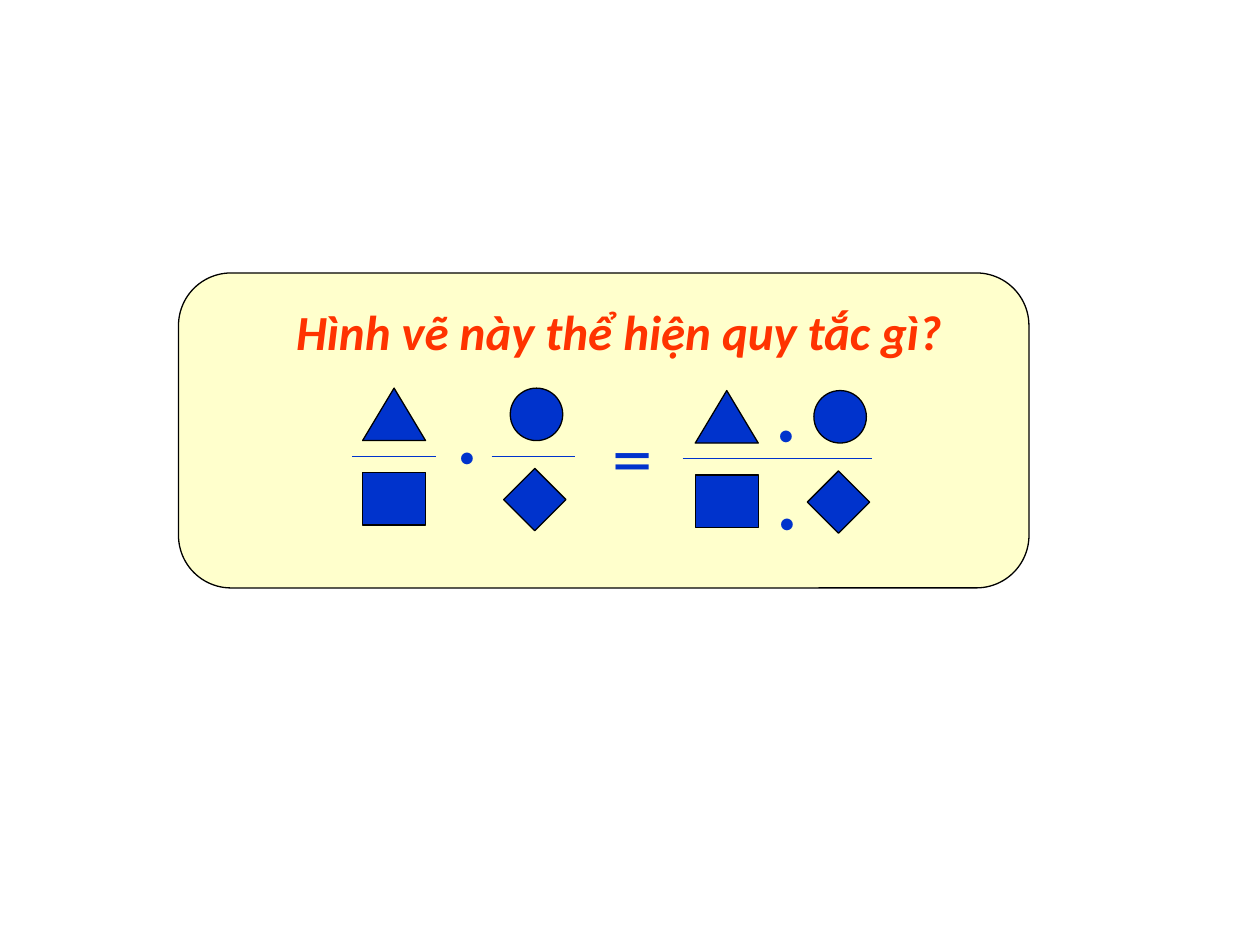
import pptx
import pptx.util
import pptx.dml.color
import pptx.enum.shapes
import pptx.enum.text
import pptx.oxml.ns
import lxml.etree
from dataclasses import dataclass

Pt = pptx.util.Pt
RGB = pptx.dml.color.RGBColor.from_string
KIND = pptx.enum.shapes.MSO_SHAPE


@dataclass(frozen=True)
class Theme:
    panel: str = "FFFFCC"
    outline: str = "000000"
    question: str = "FF3300"
    symbol: str = "0033CC"
    question_font: str = "Calibri"
    symbol_font: str = "TeX Gyre Schola"
    question_size: int = 28
    dot_size: int = 54
    equals_size: int = 36
    line_width: float = 0.75


theme = Theme()
deck = pptx.Presentation()
deck.slide_width, deck.slide_height = Pt(720), Pt(540)
page = deck.slides.add_slide(deck.slide_layouts[5])


def add_figure(kind, left, top, width, height, fill):
    figure = page.shapes.add_shape(kind, Pt(left), Pt(top), Pt(width), Pt(height))
    figure.shadow.inherit = False
    figure.fill.solid()
    figure.fill.fore_color.rgb = RGB(fill)
    figure.line.color.rgb = RGB(theme.outline)
    figure.line.width = Pt(theme.line_width)
    return figure


def write(box, text, font, size, color):
    """Put one unwrapped, left-aligned line of text in the box."""
    frame = box.text_frame
    frame.text = text
    frame.word_wrap = False
    frame.auto_size = pptx.enum.text.MSO_AUTO_SIZE.NONE
    frame.vertical_anchor = pptx.enum.text.MSO_ANCHOR.TOP
    frame.paragraphs[0].alignment = pptx.enum.text.PP_ALIGN.LEFT
    span = frame.paragraphs[0].runs[0]
    span.font.name = font
    span.font.size = Pt(size)
    span.font.color.rgb = RGB(color)
    return span


# Panel with the question
panel = add_figure(KIND.ROUNDED_RECTANGLE, 102, 156, 486, 180, theme.panel)
panel.adjustments[0] = 0.167

title = page.shapes.title
title.left, title.top, title.width, title.height = Pt(162), Pt(168.5), Pt(394.5), Pt(41)
question = write(title, "Hình vẽ này thể hiện quy tắc gì?",
                 theme.question_font, theme.question_size, theme.question)
question.font.bold = question.font.italic = True
panel._element.addnext(title._element)

# Both sides of the equation: triangle over square, circle over diamond
for triangle_left, circle_left, top in [(207.2, 291.6, 221.8), (397.3, 465.1, 223.2)]:
    add_figure(KIND.ISOSCELES_TRIANGLE, triangle_left, top, 36, 30, theme.symbol)
    add_figure(KIND.RECTANGLE, triangle_left, top + 48.2, 36, 30, theme.symbol)
    add_figure(KIND.OVAL, circle_left, top, 30, 30, theme.symbol)
    diamond = add_figure(KIND.RECTANGLE, circle_left + 1.4, top + 51.1,
                         25.2, 25.2, theme.symbol)
    diamond.rotation = 45

# Fraction bars
for start, end, height in [(201.4, 249.2, 260.8), (280.9, 328.8, 260.8), (390.1, 498.1, 262.2)]:
    bar = page.shapes.add_connector(pptx.enum.shapes.MSO_CONNECTOR.STRAIGHT,
                                    Pt(start), Pt(height), Pt(end), Pt(height))
    bar.line.color.rgb = RGB(theme.symbol)
    bar.line.width = Pt(theme.line_width)
    lxml.etree.SubElement(bar._element.spPr, pptx.oxml.ns.qn("a:effectLst"))

# Multiplication dots and the equals sign
for sign, left, top, width, height, size in [
    (".", 252.7, 207.4, 29.5, 72, theme.dot_size),
    (".", 435, 195, 29.5, 72, theme.dot_size),
    (".", 435.6, 244.8, 29.5, 72, theme.dot_size),
    ("=", 343.4, 233.3, 36.7, 50.4, theme.equals_size),
]:
    box = page.shapes.add_textbox(Pt(left), Pt(top), Pt(width), Pt(height))
    write(box, sign, theme.symbol_font, size, theme.symbol)

deck.save("out.pptx")
